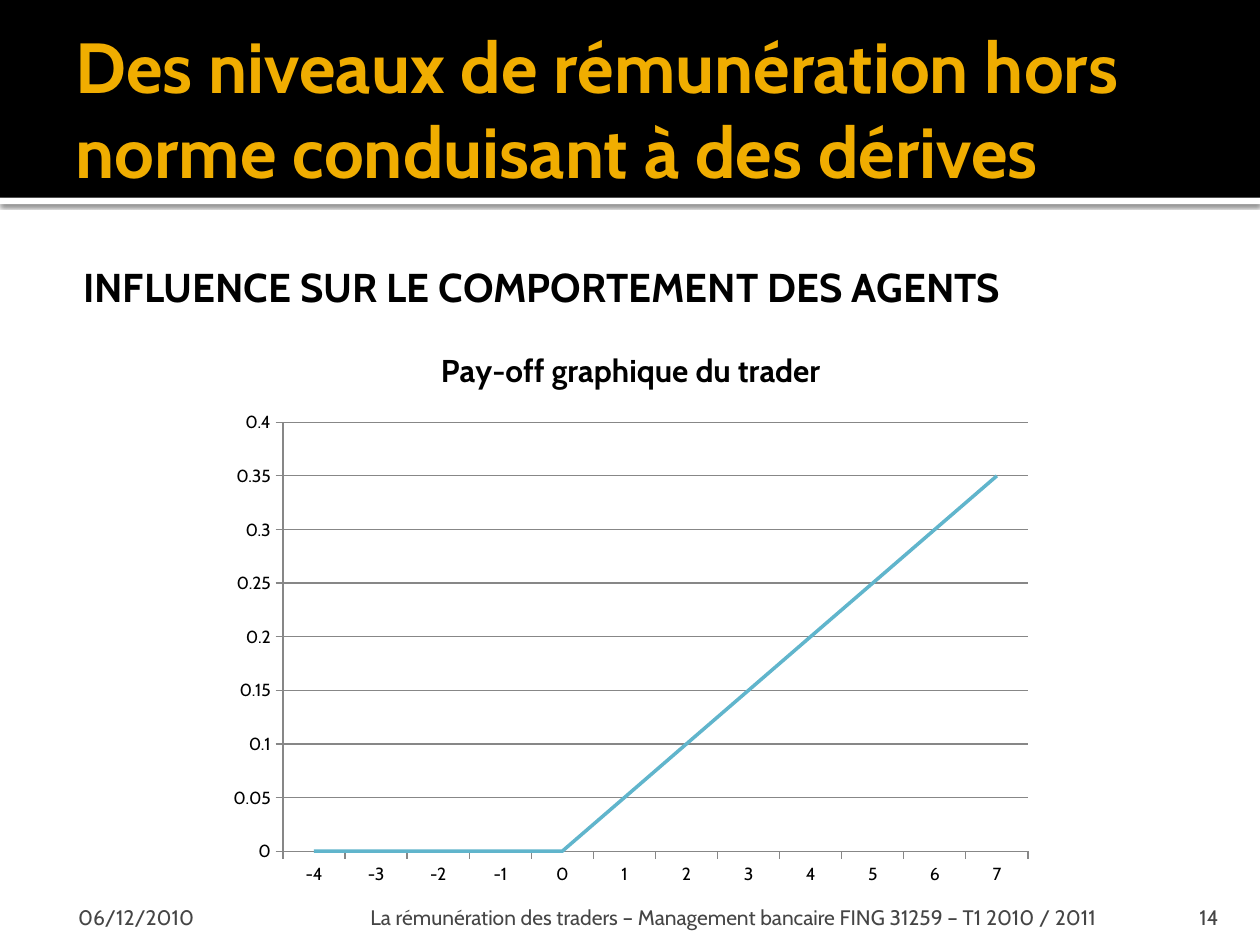
from dataclasses import dataclass

from lxml.etree import SubElement
from pptx import Presentation
from pptx.chart.data import CategoryChartData
from pptx.dml.color import RGBColor
from pptx.enum.chart import XL_CHART_TYPE, XL_TICK_LABEL_POSITION, XL_TICK_MARK
from pptx.enum.shapes import MSO_SHAPE
from pptx.enum.text import MSO_ANCHOR, MSO_AUTO_SIZE, PP_ALIGN
from pptx.oxml import parse_xml
from pptx.oxml.ns import nsdecls, qn
from pptx.util import Pt

PX = 9144  # EMU per px, at 100 px to the inch


@dataclass(frozen=True)
class Theme:
    font: str = "Cabin"
    gold: str = "F0AD00"
    black: str = "000000"
    white: str = "FFFFFF"
    gray: str = "454545"
    grid: str = "878787"
    blue: str = "60B5CC"
    title: float = 40.5
    head: float = 23
    chart: float = 18
    foot: float = 12
    axis: float = 10


@dataclass(frozen=True)
class Box:
    left: int
    top: int
    width: int
    height: int

    def emu(self) -> tuple[int, ...]:
        return tuple(n * PX for n in (self.left, self.top, self.width, self.height))


@dataclass(frozen=True)
class Label:
    text: str
    box: Box
    size: float
    color: str
    pads: tuple[int, int, int, int]
    bold: bool = False
    anchor: MSO_ANCHOR = MSO_ANCHOR.MIDDLE
    align: PP_ALIGN = PP_ALIGN.LEFT


THEME = Theme()


def footer(text: str, left: int, width: int, pads: tuple[int, int],
           align: PP_ALIGN = PP_ALIGN.LEFT) -> Label:
    return Label(text, Box(left, 708, width, 30), THEME.foot, THEME.gray,
                 (pads[0], 5, pads[1], 0), False, MSO_ANCHOR.BOTTOM, align)


TITLE = Label("Des niveaux de rémunération hors norme conduisant à des dérives",
              Box(50, 17, 900, 137), THEME.title, THEME.gold, (10, 5, 5, 5), True)
HEAD = Label("INFLUENCE SUR LE COMPORTEMENT DES AGENTS",
             Box(50, 186, 903, 78), THEME.head, THEME.black, (16, 10, 10, 5), True)
FOOT = (
    footer("06/12/2010", 50, 233, (12, 5)),
    footer("La rémunération des traders – Management bancaire FING 31259 – T1 2010 / 2011",
           289, 602, (5, 5)),
    footer("14", 897, 80, (10, 10), PP_ALIGN.RIGHT),
)
BAND = Box(0, 0, 1000, 157)
EDGE = Box(0, 157, 1000, 5)
CHART = Box(172, 258, 657, 454)
PLOT = {"x": 0.08, "y": 0.17, "w": 0.9, "h": 0.75}  # shares of the chart frame
GAINS = range(-4, 8)
RATE = 0.05


def style(font, size: float, color: str, bold: bool = False) -> None:
    font.name, font.size, font.bold = THEME.font, Pt(size), bold
    font.color.rgb = RGBColor.from_string(color)


def write(shape, label: Label) -> None:
    shape.left, shape.top, shape.width, shape.height = label.box.emu()
    frame = shape.text_frame
    frame.text = label.text
    frame.word_wrap, frame.auto_size = True, MSO_AUTO_SIZE.NONE
    frame.vertical_anchor = label.anchor
    (frame.margin_left, frame.margin_top,
     frame.margin_right, frame.margin_bottom) = (n * PX for n in label.pads)
    para = frame.paragraphs[0]
    para.alignment, para.space_before = label.align, Pt(0)
    style(para.runs[0].font, label.size, label.color, label.bold)


def unlist(para) -> None:
    """Take the bullet and its indent off a paragraph."""
    props = para._p.get_or_add_pPr()
    props.set("marL", "0")
    props.set("indent", "0")
    SubElement(props, qn("a:buNone"))


def bar(slide, box: Box, color: str, level: int):
    """Draw a plain bar, at a level counted from the back."""
    shape = slide.shapes.add_shape(MSO_SHAPE.RECTANGLE, *box.emu())
    shape.shadow.inherit = False
    shape.fill.solid()
    shape.fill.fore_color.rgb = RGBColor.from_string(color)
    shape.line.fill.background()
    slide.shapes._spTree.insert(2 + level, shape._element)
    return shape


def shade(shape) -> None:
    """Cast a soft shadow below a shape."""
    effects = shape._element.spPr.find(qn("a:effectLst"))
    effects.append(parse_xml(
        f'<a:outerShdw {nsdecls("a")} blurRad="{Pt(2.5)}" dist="{Pt(0.8)}" dir="5400000">'
        f'<a:srgbClr val="{THEME.black}"><a:alpha val="60000"/></a:srgbClr></a:outerShdw>'))


def rule(line, color: str, width: float) -> None:
    line.color.rgb = RGBColor.from_string(color)
    line.width = Pt(width)


def place(chart) -> None:
    """Fix the inner plot area."""
    area = chart._chartSpace.chart.plotArea
    for old in area.findall(qn("c:layout")):
        area.remove(old)
    layout = parse_xml(f'<c:layout {nsdecls("c")}><c:manualLayout/></c:layout>')
    modes = {"layoutTarget": "inner", "xMode": "edge", "yMode": "edge"}
    for name, value in {**modes, **PLOT}.items():
        SubElement(layout[0], qn(f"c:{name}")).set("val", str(value))
    area.insert(0, layout)


def plot(slide) -> None:
    data = CategoryChartData()
    data.categories = [str(gain) for gain in GAINS]
    data.add_series("Series 1", [round(max(0, gain) * RATE, 2) for gain in GAINS])
    chart = slide.shapes.add_chart(XL_CHART_TYPE.LINE, *CHART.emu(), data).chart
    style(chart.font, THEME.axis, THEME.black)
    chart.has_legend = False
    chart.has_title = True
    frame = chart.chart_title.text_frame
    frame.text = "Pay-off graphique du trader"
    style(frame.paragraphs[0].runs[0].font, THEME.chart, THEME.black, True)
    chart.chart_title.include_in_layout = False
    place(chart)

    for axis in (chart.category_axis, chart.value_axis):
        axis.major_tick_mark = XL_TICK_MARK.OUTSIDE
        axis.minor_tick_mark = XL_TICK_MARK.NONE
        axis.tick_label_position = XL_TICK_LABEL_POSITION.LOW
        rule(axis.format.line, THEME.grid, 0.75)
    scale = chart.value_axis
    scale.minimum_scale, scale.maximum_scale, scale.major_unit = 0, 0.4, RATE
    scale.has_major_gridlines = True
    rule(scale.major_gridlines.format.line, THEME.grid, 0.75)

    chart.plots[0].vary_by_categories = False
    line = chart.plots[0].series[0]
    line.smooth = False
    rule(line.format.line, THEME.blue, 2)


def main() -> None:
    deck = Presentation()
    deck.slide_width, deck.slide_height = 1000 * PX, 750 * PX
    slide = deck.slides.add_slide(deck.slide_layouts[1])
    shade(bar(slide, EDGE, THEME.white, 0))
    bar(slide, BAND, THEME.black, 1)
    write(slide.shapes.title, TITLE)
    body = slide.placeholders[1]
    write(body, HEAD)
    unlist(body.text_frame.paragraphs[0])
    for label in FOOT:
        write(slide.shapes.add_textbox(*label.box.emu()), label)
    plot(slide)
    deck.save("out.pptx")


if __name__ == "__main__":
    main()
